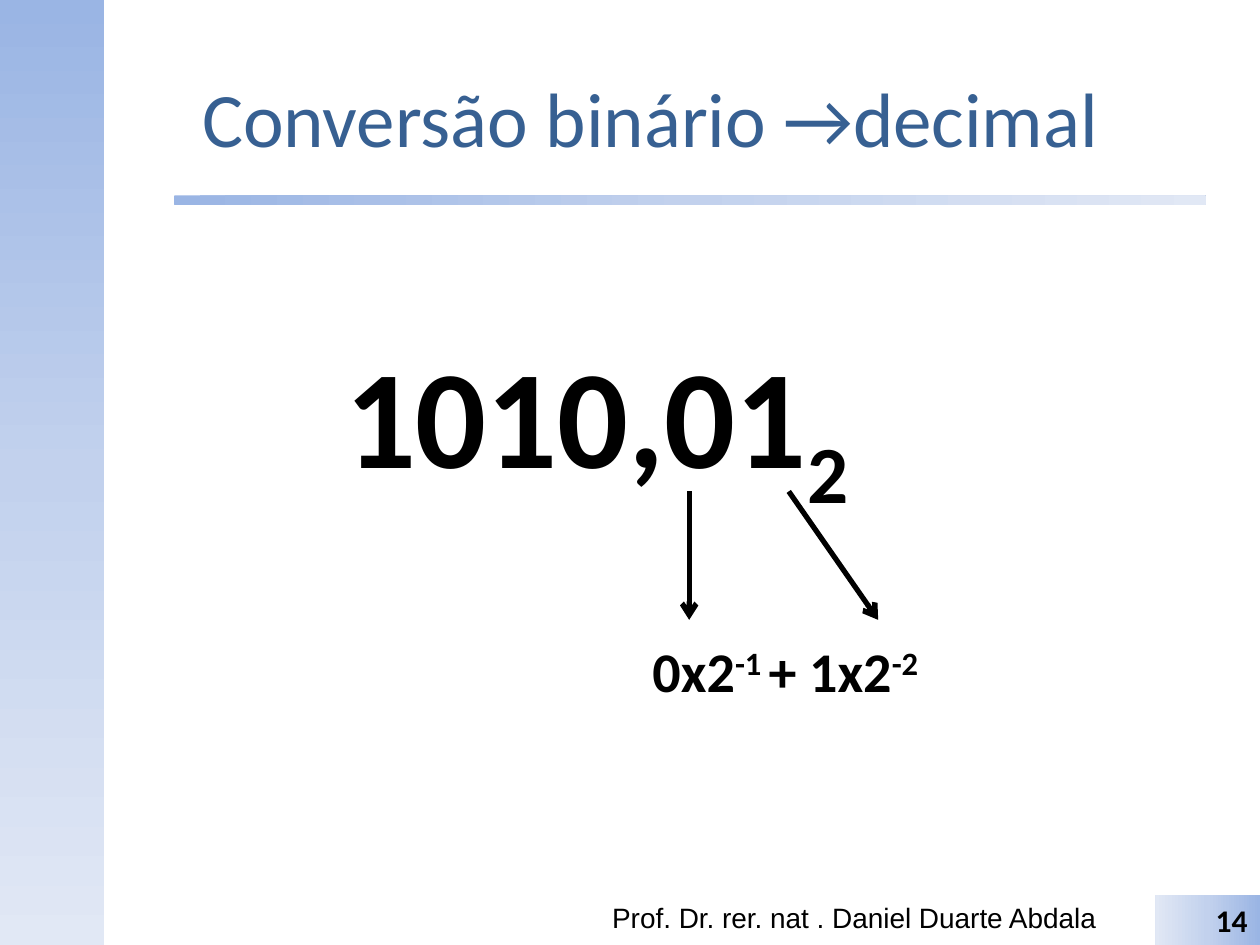
"""Build a slide on converting a binary fraction to decimal."""
from lxml.etree import SubElement
from pptx import Presentation
from pptx.dml.color import RGBColor
from pptx.enum.shapes import MSO_CONNECTOR, MSO_SHAPE
from pptx.enum.text import MSO_ANCHOR, PP_ALIGN
from pptx.oxml.ns import qn
from pptx.util import Inches, Pt

RECTANGLE, ROUNDED = MSO_SHAPE.RECTANGLE, MSO_SHAPE.ROUNDED_RECTANGLE
STRAIGHT = MSO_CONNECTOR.STRAIGHT
LEFT, CENTER, RIGHT = PP_ALIGN.LEFT, PP_ALIGN.CENTER, PP_ALIGN.RIGHT
TOP, MIDDLE = MSO_ANCHOR.TOP, MSO_ANCHOR.MIDDLE

THEME = {
    "title": {"size": 44, "font": "Calibri", "color": "376092", "bold": False},
    "footer": {"size": 16, "font": "Arial", "color": "000000", "bold": False},
    "page": {"size": 18, "font": "Calibri", "color": "000000", "bold": True},
    "number": {"size": 80, "font": "Calibri", "color": "000000", "bold": True},
    "terms": {"size": 32, "font": "Calibri", "color": "000000", "bold": True},
    "gradient": ((0, "9AB5E4"), (50, "C2D1ED"), (100, "E1E8F5")),
    "arrow": {"color": "000000", "width": 3},
}

PANELS = {
    "side": (RECTANGLE, (0, 0, 0.83, 7.5), 90),
    "rule": (ROUNDED, (1.38, 1.55, 8.19, 0.08), 0),
    "corner": (RECTANGLE, (9.17, 7.1, 0.83, 0.4), 180),
}
PAGE_NUMBER = [("14", 0)]
TEXTS = [
    ("title", (0.83, 0.3, 8.67, 1.25), CENTER, MIDDLE, True,
     [("Conversão binário →decimal", 0)]),
    ("footer", (4.76, 7.1, 4.19, 0.4), LEFT, TOP, True,
     [("Prof. Dr. rer. nat . Daniel Duarte Abdala", 0)]),
    ("number", (2.64, 2.56, 4.28, 1.45), LEFT, TOP, False,
     [("1010,01", 0), ("2", -25)]),
    ("terms", (5.08, 5, 2.44, 0.64), LEFT, TOP, True,
     [("0x2", 0), ("-1 ", 30), ("+ 1x2", 0), ("-2", 30)]),
]
ARROW_TOP, ARROW_BOTTOM = 3.9, 4.92
ARROWS = [(5.47, 5.47), (6.26, 6.97)]


def inches(values):
    return [Inches(value) for value in values]


def add_panel(page, shape_kind, place, angle):
    panel = page.shapes.add_shape(shape_kind, *inches(place))
    panel.shadow.inherit = False
    panel.line.fill.background()
    if shape_kind == ROUNDED:
        panel.adjustments[0] = 0.17
    panel.fill.gradient()
    panel.fill.gradient_angle = (360 - angle) % 360
    stops = next(panel.element.iter(qn("a:gsLst")))
    for stop in list(stops):
        stops.remove(stop)
    for position, color in THEME["gradient"]:
        stop = SubElement(stops, qn("a:gs"), pos=str(position * 1000))
        SubElement(stop, qn("a:srgbClr"), val=color)
    return panel


def write(box, style_name, spans, align, anchor, wrap):
    style = THEME[style_name]
    frame = box.text_frame
    frame.word_wrap = wrap
    frame.vertical_anchor = anchor
    para = frame.paragraphs[0]
    para.alignment = align
    for text, baseline in spans:
        span = para.add_run()
        span.text = text
        span.font.size = Pt(style["size"])
        span.font.name = style["font"]
        span.font.bold = style["bold"]
        span.font.color.rgb = RGBColor.from_string(style["color"])
        if baseline:
            span.font._element.set("baseline", str(baseline * 1000))


def add_arrow(page, start, end):
    arrow = page.shapes.add_connector(
        STRAIGHT, *inches((start, ARROW_TOP, end, ARROW_BOTTOM)))
    arrow.line.width = Pt(THEME["arrow"]["width"])
    arrow.line.color.rgb = RGBColor.from_string(THEME["arrow"]["color"])
    SubElement(arrow.line._get_or_add_ln(), qn("a:tailEnd"), type="arrow")
    SubElement(arrow.element.spPr, qn("a:effectLst"))


def main():
    deck = Presentation()
    deck.slide_width, deck.slide_height = inches((10, 7.5))
    page = deck.slides.add_slide(deck.slide_layouts[6])
    panels = {name: add_panel(page, *panel) for name, panel in PANELS.items()}
    write(panels["corner"], "page", PAGE_NUMBER, RIGHT, TOP, True)
    for style_name, place, align, anchor, wrap, spans in TEXTS:
        box = page.shapes.add_textbox(*inches(place))
        write(box, style_name, spans, align, anchor, wrap)
    for start, end in ARROWS:
        add_arrow(page, start, end)
    deck.save("out.pptx")


if __name__ == "__main__":
    main()
